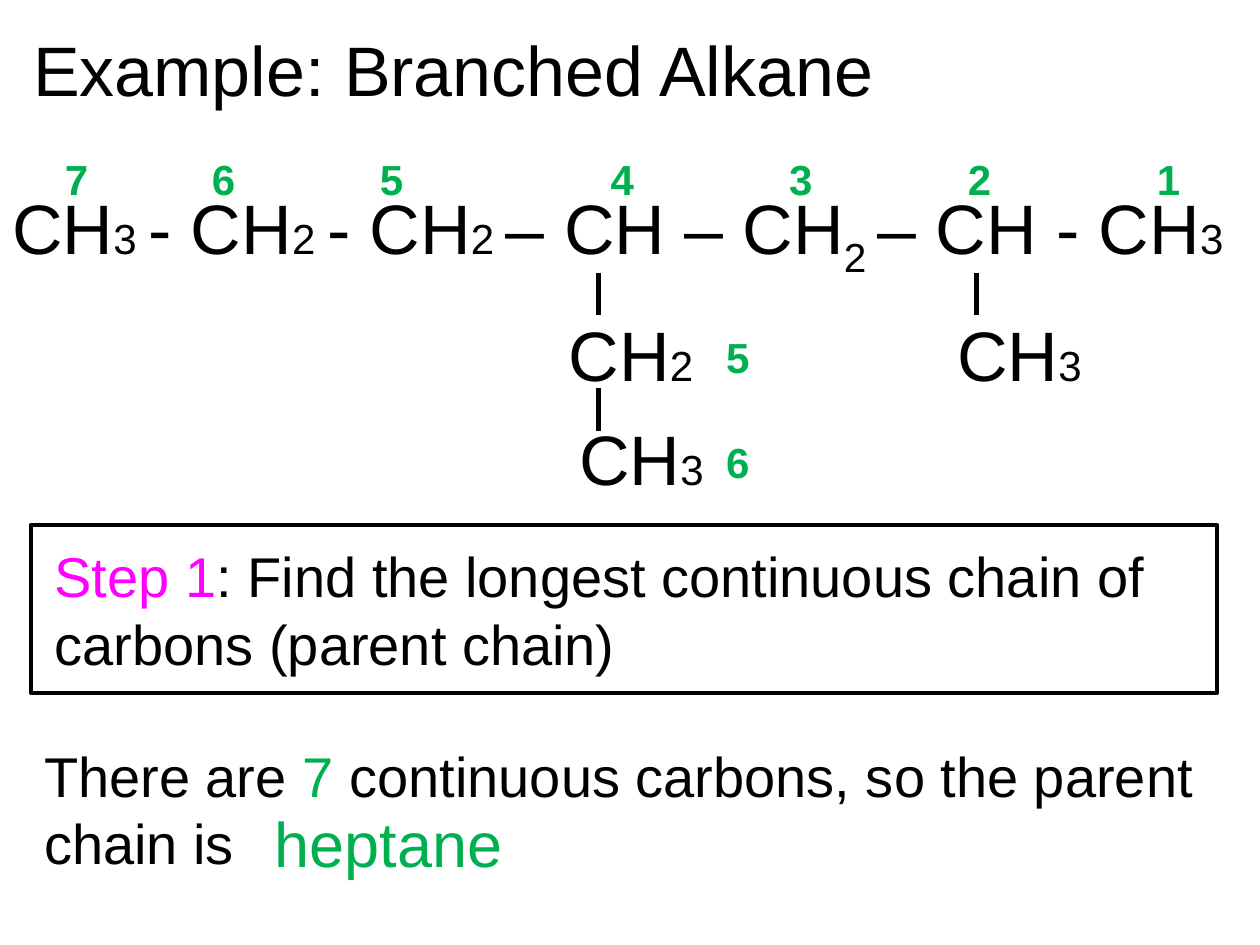
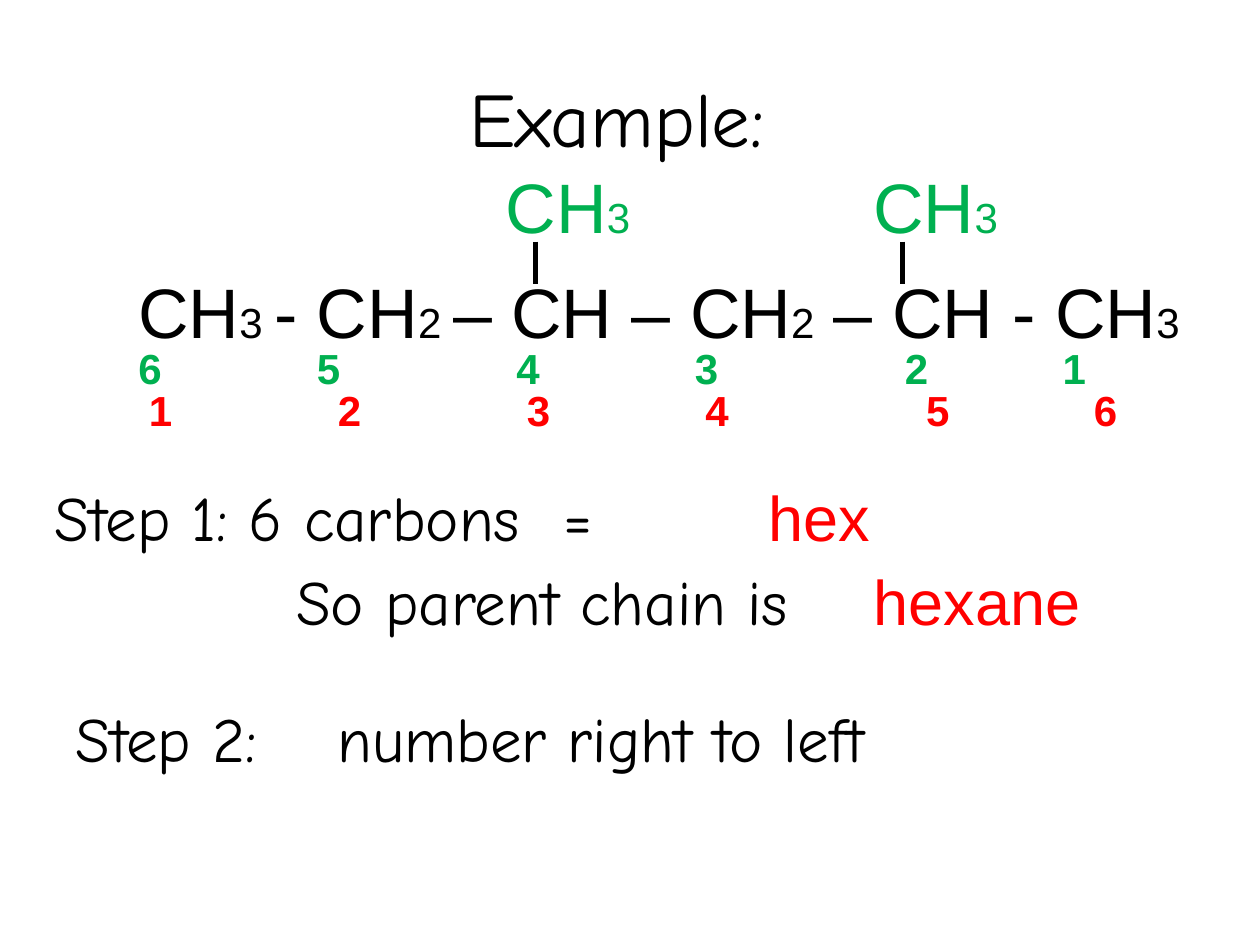
from lxml.etree import SubElement
from pptx import Presentation
from pptx.dml.color import RGBColor
from pptx.enum.shapes import MSO_CONNECTOR as Connector, MSO_SHAPE as Shape
from pptx.enum.text import MSO_ANCHOR as Anchor, PP_ALIGN as Align
from pptx.oxml.ns import qn
from pptx.util import Cm, Pt

# Shared look
BLACK, GREEN, RED, MAGENTA = "000000", "00B050", "FF0000", "FF00FF"
PLAIN, HAND = "Arial", "Comic Neue"
ATOM_SIZE, INDEX_SIZE = 40, 24
BOND_LENGTH = 0.85


def colour(value):
    return RGBColor.from_string(value)


def add_span(para, text, size=32, font=PLAIN, ink=BLACK, bold=False, baseline=0):
    span = para.add_run()
    span.text = text
    span.font.name = font
    span.font.size = Pt(size)
    span.font.bold = bold
    span.font.color.rgb = colour(ink)
    if baseline:
        span._r.get_or_add_rPr().set("baseline", str(baseline * 1000))


def add_box(page, left, top, width, height, anchor=Anchor.TOP, align=Align.LEFT):
    """Add an empty text box and return its first paragraph."""
    box = page.shapes.add_textbox(Cm(left), Cm(top), Cm(width), Cm(height))
    frame = box.text_frame
    frame.word_wrap = True
    frame.vertical_anchor = anchor
    para = frame.paragraphs[0]
    para.alignment = align
    return para


def add_text(page, text, left, top, width, height=1.8, **style):
    para = add_box(page, left, top, width, height)
    add_span(para, text, **style)
    return para


def set_hanging(para, indent):
    props = para._p.get_or_add_pPr()
    props.set("marL", str(Cm(indent)))
    props.set("indent", str(-Cm(indent)))


def set_tab(para, position):
    tabs = SubElement(para._p.get_or_add_pPr(), qn("a:tabLst"))
    SubElement(tabs, qn("a:tab"), pos=str(Cm(position)), algn="l")


def add_formula(page, formula, left, top, width=3.1, ink=BLACK):
    """Bars enclose small indices; one that starts with _ is a lowered index."""
    para = add_box(page, left, top, width, 1.96)
    for number, part in enumerate(formula.split("|")):
        if part.startswith("_"):
            add_span(para, part[1:], size=ATOM_SIZE, ink=ink, baseline=-25)
        else:
            size = INDEX_SIZE if number % 2 else ATOM_SIZE
            add_span(para, part, size=size, ink=ink)


def add_number(page, number, left, top, ink=GREEN):
    add_text(page, str(number), left, top, 1.05, 1.27, size=24, ink=ink, bold=True)


def add_numbers(page, numbers, lefts, top, ink=GREEN):
    for number, left in zip(numbers, lefts):
        add_number(page, number, left, top, ink)


def add_bond(page, x, top):
    bond = page.shapes.add_connector(
        Connector.STRAIGHT, Cm(x), Cm(top), Cm(x), Cm(top + BOND_LENGTH))
    bond.line.color.rgb = colour(BLACK)
    bond.line.width = Pt(3)
    SubElement(bond._element.spPr, qn("a:effectLst"))


def add_frame(page, left, top, width, height):
    frame = page.shapes.add_shape(
        Shape.RECTANGLE, Cm(left), Cm(top), Cm(width), Cm(height))
    frame.shadow.inherit = False
    frame.fill.background()
    frame.line.color.rgb = colour(BLACK)
    frame.line.width = Pt(2.25)


def build_parent_chain(page):
    add_text(page, "Example: Branched Alkane", 0.42, 0.42, 24.97, size=40)

    # Molecule and its branches
    add_formula(page, "CH|3 |- CH|2 |- CH|2 |– CH – CH|_2 |– CH - CH|3", 0, 3.6, 25.4)
    add_formula(page, "CH|2", 11.22, 6.15)
    add_formula(page, "CH|3", 19.05, 6.15)
    add_formula(page, "CH|3", 11.43, 8.26)
    for x, top in ((12.06, 5.5), (19.68, 5.5), (12.06, 7.83)):
        add_bond(page, x, top)

    # Carbon numbers along the chain and down the branch
    add_numbers(page, range(7, 0, -1),
                (1.06, 4.02, 7.41, 12.06, 15.66, 19.26, 23.07), 2.96)
    add_number(page, 5, 14.39, 6.56)
    add_number(page, 6, 14.39, 8.68)

    # Step and answer
    step = add_box(page, 0.85, 10.8, 24.5, 3)
    add_span(step, "Step 1", ink=MAGENTA)
    add_span(step, ": Find the longest continuous chain of carbons (parent chain)")
    add_frame(page, 0.62, 10.58, 23.92, 3.39)
    result = add_box(page, 0.64, 14.82, 25.4, 3)
    add_span(result, "There are ")
    add_span(result, "7", ink=GREEN)
    add_span(result, " continuous carbons, so the parent chain is")
    add_text(page, "heptane", 5.29, 16.09, 7.2, size=36, ink=GREEN)


def build_numbering(page):
    title = add_box(page, 1.27, 0.76, 22.86, 3.18, Anchor.MIDDLE, Align.CENTER)
    add_span(title, "Example: ", size=44, font=HAND)

    # Molecule with its two branches
    add_formula(page, "CH|3 |- CH|2 |– CH – CH|2| – CH - CH|3", 2.54, 5.29, 22.22)
    for branch_left, bond_x in ((9.95, 10.8), (17.36, 18.2)):
        add_formula(page, "CH|3", branch_left, 3.18, ink=GREEN)
        add_bond(page, bond_x, 4.87)

    # Carbon numbers in both directions
    add_numbers(page, range(6, 0, -1),
                (2.54, 6.14, 10.16, 13.76, 17.99, 21.17), 6.77)
    add_numbers(page, range(1, 7),
                (2.75, 6.56, 10.37, 13.97, 18.42, 21.8), 7.62, RED)

    # Steps and answers
    hand = {"size": 36, "font": HAND}
    answer = {"size": 36, "ink": RED}
    count = add_text(page, "Step 1: 6 carbons\t =", 0.85, 9.53, 16.72, **hand)
    set_hanging(count, 0.95)
    add_text(page, "hex", 15.24, 9.53, 4.24, **answer)
    add_text(page, "So parent chain is", 5.72, 11.22, 12.06, **hand)
    add_text(page, "hexane", 17.36, 11.22, 5.72, **answer)
    direction = add_text(page, "Step 2:\tnumber right to left", 1.27, 13.97, 22.01, **hand)
    set_tab(direction, 5.28)


def main():
    deck = Presentation()
    deck.slide_width, deck.slide_height = Cm(25.4), Cm(19.05)
    for build in (build_parent_chain, build_numbering):
        build(deck.slides.add_slide(deck.slide_layouts[6]))
    deck.save("out.pptx")


if __name__ == "__main__":
    main()
